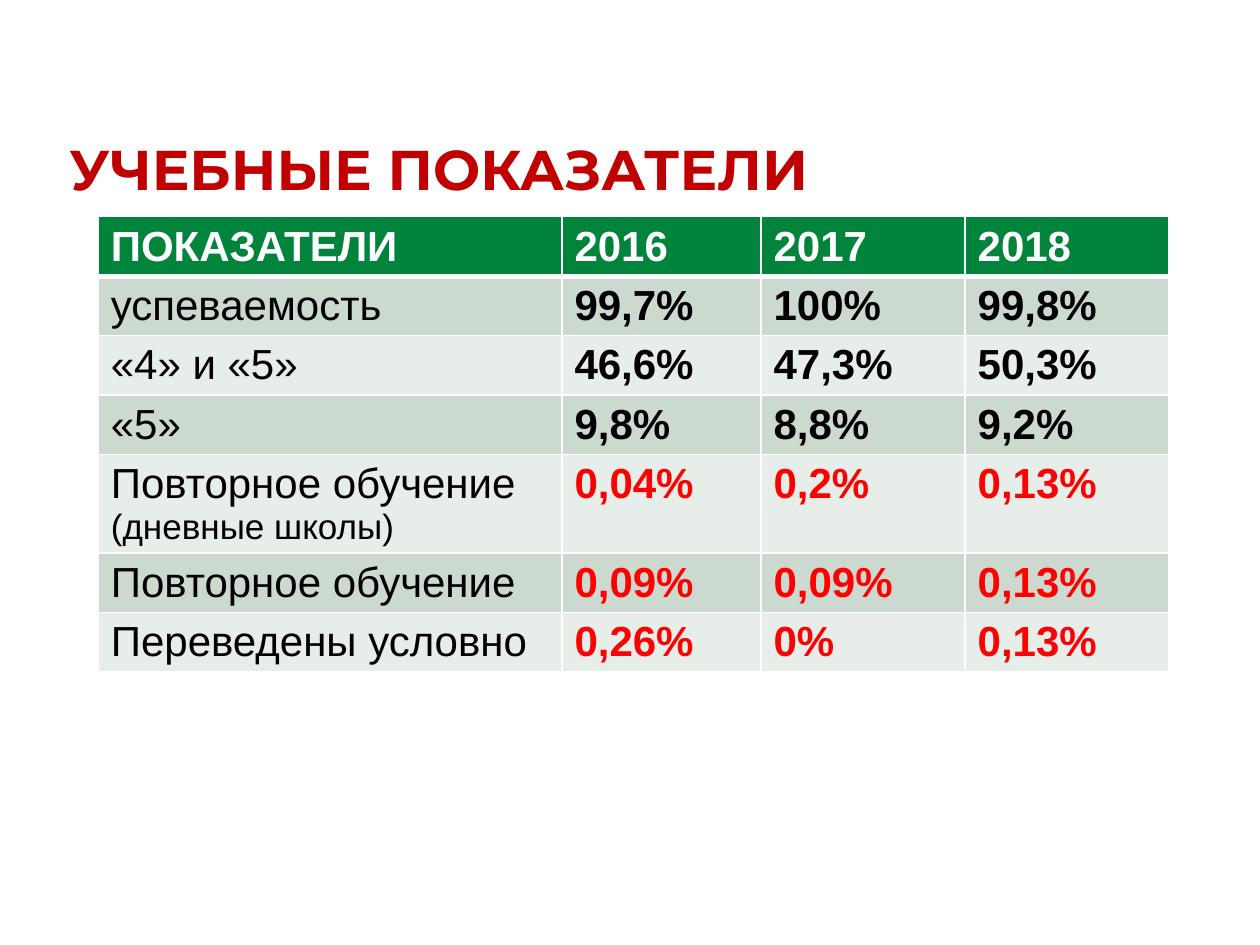
from lxml import etree
from pptx import Presentation
from pptx import util as u
from pptx.dml.color import RGBColor
from pptx.enum import text
from pptx.oxml.ns import qn

HEADER = ["ПОКАЗАТЕЛИ", "2016", "2017", "2018"]
RESULTS = [
    ["успеваемость", "99,7%", "100%", "99,8%"],
    ["«4» и «5»", "46,6%", "47,3%", "50,3%"],
    ["«5»", "9,8%", "8,8%", "9,2%"],
]
PROBLEMS = [
    ["Повторное обучение |(дневные школы)", "0,04%", "0,2%", "0,13%"],
    ["Повторное обучение", "0,09%", "0,09%", "0,13%"],
    ["Переведены условно", "0,26%", "0%", "0,13%"],
]


def rgb(value):
    return RGBColor.from_string(value)


def add_line(parent, tag, width, color):
    ln = etree.SubElement(parent, qn(tag), w=str(u.Pt(width)))
    fill = etree.SubElement(ln, qn("a:solidFill"))
    etree.SubElement(fill, qn("a:srgbClr"), val=color)
    return ln


class Deck:
    WHITE, BLACK, RED = "FFFFFF", "000000", "FF0000"
    GREEN, BANDS = "00843C", ("CCD9CE", "E7EDE8")
    TITLE, OUTLINE = "C00000", "005728"

    def __init__(self, width=10, height=7.5):
        self.prs = Presentation()
        self.prs.slide_width, self.prs.slide_height = u.Inches(width), u.Inches(height)
        self.s = self.prs.slides.add_slide(self.prs.slide_layouts[5])

    def box(self, x, y, w, h):
        """Turn shares of the slide into lengths."""
        width, height = self.prs.slide_width, self.prs.slide_height
        return int(x * width), int(y * height), int(w * width), int(h * height)

    def format(self, r, size, color, bold, font="Arial"):
        r.font.name, r.font.size, r.font.bold = font, u.Pt(size), bold
        r.font.color.rgb = rgb(color)

    def title(self, words, *shares):
        sp = self.s.shapes.title
        sp.left, sp.top, sp.width, sp.height = self.box(*shares)
        tf = sp.text_frame
        tf.text = words
        tf.auto_size = text.MSO_AUTO_SIZE.NONE
        tf.vertical_anchor = text.MSO_ANCHOR.BOTTOM
        tf.margin_left = tf.margin_right = u.Inches(0.05)
        tf.margin_top = tf.margin_bottom = 0
        p = tf.paragraphs[0]
        p.alignment = text.PP_ALIGN.LEFT
        r = p.runs[0]
        self.format(r, 32, self.TITLE, True, "Montserrat")
        # Hairline outline of the letters
        rpr = r.font._element
        rpr.insert(0, add_line(rpr, "a:ln", 0.04, self.OUTLINE))

    def cell(self, cell, words, fill, color, bold, bottom):
        p = cell.text_frame.paragraphs[0]
        for size, part in zip((24, 20), words.split("|")):
            r = p.add_run()
            r.text = part
            self.format(r, size, color, bold)
        # Borders come before the fill in the cell's properties
        tcpr = cell._tc.get_or_add_tcPr()
        for side, width in zip("LRTB", (1, 1, 1, bottom)):
            add_line(tcpr, f"a:ln{side}", width, self.WHITE)
        cell.fill.solid()
        cell.fill.fore_color.rgb = rgb(fill)

    def table(self, rows, first_red, widths, heights, *shares):
        frame = self.s.shapes.add_table(len(rows), len(widths), *self.box(*shares))
        tb = frame.table
        for column, width in zip(tb.columns, widths):
            column.width = u.Inches(width)
        for i, (row, height) in enumerate(zip(rows, heights)):
            tb.rows[i].height = u.Inches(height)
            for j, words in enumerate(row):
                fill, color = self.BANDS[(i - 1) % 2], self.BLACK
                if i == 0:
                    fill, color = self.GREEN, self.WHITE
                elif j and i >= first_red:
                    color = self.RED
                self.cell(tb.cell(i, j), words, fill, color,
                          i == 0 or j > 0, 1 if i else 3)


def main():
    deck = Deck()

    # Heading
    deck.title("УЧЕБНЫЕ ПОКАЗАТЕЛИ", 0.05, 0.35 / 7.5, 0.792, 1.25 / 7.5)

    # Indicators by year, the problem rows in red
    rows = [HEADER] + RESULTS + PROBLEMS
    heights = [0.78 if "|" in row[0] else 0.47 for row in rows]
    deck.table(rows, 1 + len(RESULTS), [3.68, 1.58, 1.62, 1.62], heights,
               0.078, 1.72 / 7.5, 0.85, sum(heights) / 7.5)

    deck.prs.save("out.pptx")


if __name__ == "__main__":
    main()
